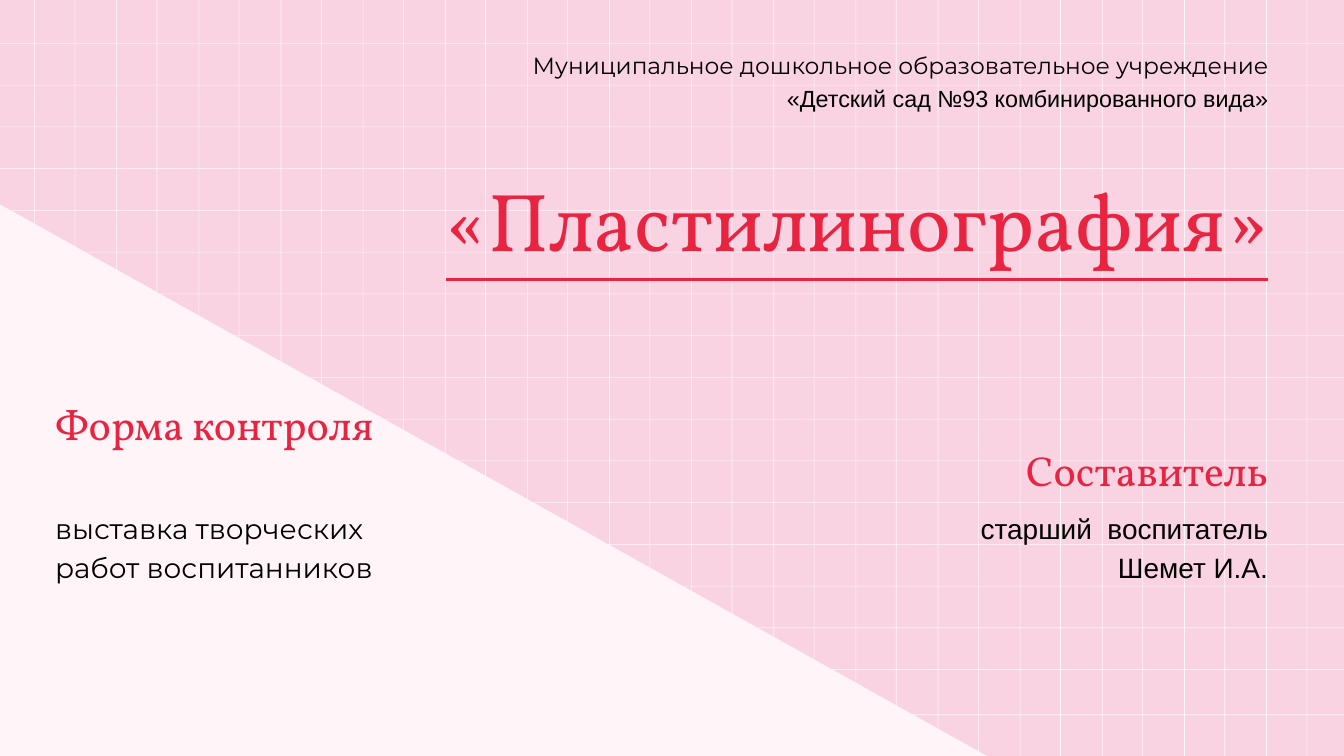
from dataclasses import dataclass
from itertools import cycle

from lxml import etree
from pptx import Presentation
from pptx.dml.color import RGBColor
from pptx.enum.shapes import MSO_SHAPE
from pptx.enum.text import MSO_ANCHOR, PP_ALIGN
from pptx.oxml.ns import qn
from pptx.util import Pt

RECT = MSO_SHAPE.RECTANGLE
TOP = MSO_ANCHOR.TOP
LEFT, RIGHT, JUSTIFY = PP_ALIGN.LEFT, PP_ALIGN.RIGHT, PP_ALIGN.JUSTIFY


@dataclass(frozen=True)
class Theme:
    """Colours, fonts and type sizes with their line spacing."""
    paper: str = "FAD3E3"
    grid: str = "FFFFFF"
    corner: str = "FFF5F9"
    accent: str = "E82441"
    ink: str = "000000"
    serif: str = "Vollkorn"
    sans: str = "Montserrat"
    plain: str = "Arial"
    title: tuple = (88, 96.8)
    heading: tuple = (44.9, 49.4)
    body: tuple = (30, 42)
    header: tuple = (25, 35)


THEME = Theme()
WIDTH, HEIGHT = 1440, 810
LINE = 0.72
GRID_ALPHA = 83
LINE_HEIGHT, LINE_WIDTH = 831, 1492.6
COLUMN_PITCH, ROW_PITCH = 88, 44.73
COLUMN_STARTS = (36.7, 79.9)
LEFT_EDGE, RIGHT_EDGE = 59, 1358.6
NARROW = 342.7


def add_rect(slide, box, color, alpha=100, rotation=0):
    """Draw a borderless filled rectangle."""
    sp = slide.shapes.add_shape(RECT, *map(Pt, box))
    sp.shadow.inherit = False
    sp.line.fill.background()
    sp.fill.solid()
    sp.fill.fore_color.rgb = RGBColor.from_string(color)
    sp.rotation = rotation
    if alpha < 100:
        clr = sp.fill._xPr.find(".//" + qn("a:srgbClr"))
        etree.SubElement(clr, qn("a:alpha"), val=str(alpha * 1000))


def add_grid(slide):
    """Draw the translucent squared-paper lines."""
    for start in COLUMN_STARTS:
        for k, top in zip(range(16), cycle((-12, -21, -21, -14.4))):
            x = start + k * COLUMN_PITCH
            add_rect(slide, (x, top, LINE, LINE_HEIGHT), THEME.grid, GRID_ALPHA)
    rows = [46.1 + k * ROW_PITCH for k in range(16)] + [765.4]
    for y, left in zip(rows, cycle((-52.6, -52.6, -44.6, -44.6))):
        add_rect(slide, (left, y, LINE_WIDTH, LINE), THEME.grid, GRID_ALPHA)


def add_text(slide, box, lines, style, color, align=LEFT, underline=False):
    """Add a text box with one paragraph per (text, font) pair."""
    tf = slide.shapes.add_textbox(*map(Pt, box)).text_frame
    tf.word_wrap = True
    tf.vertical_anchor = TOP
    tf.margin_left = tf.margin_right = tf.margin_top = tf.margin_bottom = 0
    size, spacing = style
    for i, (text, font) in enumerate(lines):
        p = tf.add_paragraph() if i else tf.paragraphs[0]
        p.alignment = align
        p.line_spacing = Pt(spacing)
        r = p.add_run()
        r.text = text
        r.font.name = font
        r.font.size = Pt(size)
        r.font.underline = underline
        r.font.color.rgb = RGBColor.from_string(color)


def right_box(top, width, height):
    """Return a box that ends at the right margin."""
    return RIGHT_EDGE - width, top, width, height


def main():
    """Build the title slide and save it."""
    t = THEME
    prs = Presentation()
    prs.slide_width, prs.slide_height = Pt(WIDTH), Pt(HEIGHT)
    s = prs.slides.add_slide(prs.slide_layouts[6])
    s.background.fill.solid()
    s.background.fill.fore_color.rgb = RGBColor.from_string(t.paper)

    add_grid(s)
    add_rect(s, (-351.4, 544.3, 1723.7, 549.4), t.corner, rotation=29.2)

    add_text(s, right_box(190.1, 1025.3, 193), [("«Пластилинография»", t.serif)],
             t.title, t.accent, RIGHT, underline=True)
    add_text(s, (LEFT_EDGE, 432, NARROW, 97.9), [("Форма контроля", t.serif)],
             t.heading, t.accent, JUSTIFY)
    add_text(s, right_box(49.7, 1222.6, 102.2),
             [("Муниципальное дошкольное образовательное учреждение", t.sans),
              ("«Детский сад №93 комбинированного вида»", t.plain)],
             t.header, t.ink, RIGHT)
    add_text(s, (LEFT_EDGE, 542.2, NARROW, 123.1),
             [("выставка творческих работ воспитанников", t.sans)],
             t.body, t.ink)
    add_text(s, right_box(541.7, NARROW, 84),
             [("старший  воспитатель Шемет И.А.", t.plain)],
             t.body, t.ink, RIGHT)
    add_text(s, right_box(481, NARROW, 49.7), [("Составитель", t.serif)],
             t.heading, t.accent, RIGHT)
    prs.save("out.pptx")


if __name__ == "__main__":
    main()
